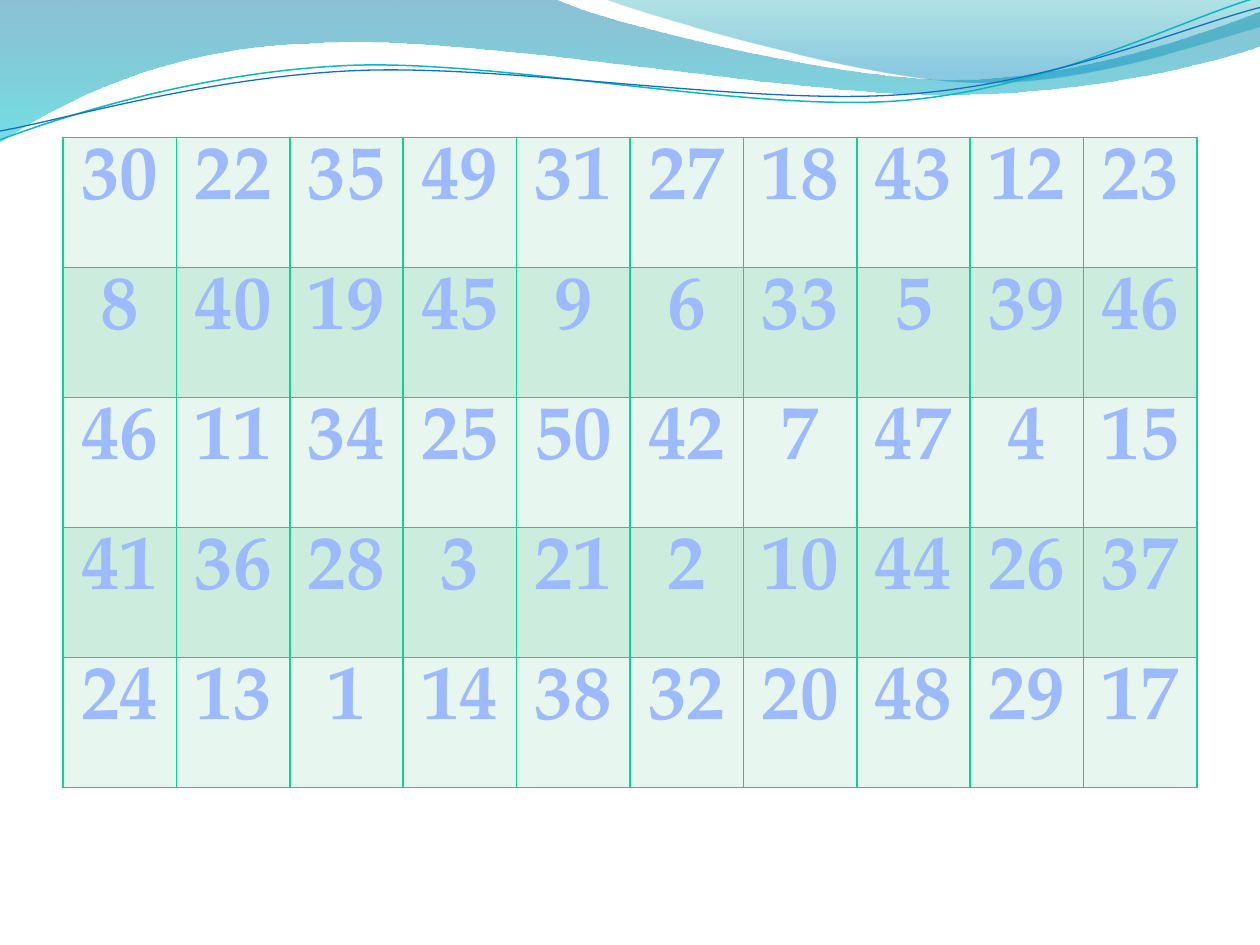
import math

import pptx
import pptx.dml.color
import pptx.enum.text
import pptx.oxml
import pptx.oxml.ns
import pptx.util

THEME = {
    "font": "TeX Gyre Pagella",
    "number_size": 44,
    "number_gradient": [(0, "B8CCFF", 100), (9, "9EBAFF", 100), (50, "00386A", 100),
                        (79, "9EBAFF", 100), (100, "B8CCFF", 100)],
    "number_outline": ("0669C4", 0.83),
    "border": ("10CF9B", 1),
    "row_fills": ["E7F6EF", "CCEDDE"],
    "wide_wave": [(0, "0074A1", 45), (100, "00C6CF", 55)],
    "right_wave": [(0, "00A1A9", 30), (80, "008BBF", 45)],
    "teal_line": ("0AB8BF", 0.85),
    "blue_line": ("0F6FC6", 0.75),
}
NS = pptx.oxml.ns.nsdecls("a")
qn = pptx.oxml.ns.qn


def gradient_xml(stops):
    """Gradient running from top to bottom; stops are (position, colour, opacity)."""
    marks = "".join(
        f'<a:gs pos="{position * 1000}"><a:srgbClr val="{colour}">'
        f'<a:alpha val="{opacity * 1000}"/></a:srgbClr></a:gs>'
        for position, colour, opacity in stops)
    return pptx.oxml.parse_xml(
        f'<a:gradFill {NS} rotWithShape="1"><a:gsLst>{marks}</a:gsLst>'
        '<a:lin ang="5400000" scaled="0"/></a:gradFill>')


def line_xml(tag, colour, points):
    return pptx.oxml.parse_xml(
        f'<a:{tag} {NS} w="{pptx.util.Pt(points)}"><a:solidFill>'
        f'<a:srgbClr val="{colour}"/></a:solidFill></a:{tag}>')


deck = pptx.Presentation()
deck.slide_width = pptx.util.Inches(10)
deck.slide_height = pptx.util.Inches(7.5)
slide = deck.slides.add_slide(deck.slide_layouts[6])
UNIT = deck.slide_width / 10  # grid step: a tenth of the slide's width

# Waves: turning centre (None if level), start, then steps of one point
# (straight) or three points (Bezier)
waves = [
    ("wide_wave", None, (0, 0), [
        [(4.4, -0.01)],
        [(4.76, 0.17), (6.64, 0.63), (7.58, 0.63)],
        [(8.53, 0.63), (9.58, 0.26), (10, 0.09)],
        [(10.01, 0.36)],
        [(9.83, 0.44), (8.7, 0.76), (7.46, 0.75)],
        [(6.22, 0.75), (3.82, 0.28), (2.57, 0.34)],
        [(1.29, 0.36), (0.46, 0.83), (-0.01, 1.13)]]),
    ("right_wave", None, (4.79, -0.01), [
        [(5.09, 0.11), (6.82, 0.62), (7.69, 0.65)],
        [(8.56, 0.69), (9.61, 0.32), (10, 0.21)],
        [(10, 0)]]),
    ("teal_line", (4.99, 0.58), (0, 1.11), [
        [(0.48, 0.93), (1.58, 0.57), (2.77, 0.52)],
        [(3.95, 0.47), (5.93, 0.89), (7.13, 0.8)],
        [(8.33, 0.71), (9.38, 0.15), (9.98, -0.02)]]),
    ("blue_line", (5, 0.59), (0, 1.04), [
        [(0.47, 0.96), (1.64, 0.61), (2.83, 0.56)],
        [(4.03, 0.51), (5.97, 0.84), (7.17, 0.75)],
        [(8.36, 0.67), (9.41, 0.21), (10, 0.06)]]),
]
FINE = 1000  # drawing units per grid step
TILT = 2.7  # degrees by which the thin lines turn to the left
cos, sin = math.cos(math.radians(TILT)), math.sin(math.radians(TILT))
for style, centre, start, steps in waves:
    points = [start] + [point for step in steps for point in step]
    if centre:  # level the points; the shape's own rotation tilts them again
        cx, cy = centre
        points = [(cx + (x - cx) * cos - (y - cy) * sin,
                   cy + (x - cx) * sin + (y - cy) * cos) for x, y in points]
    points = [(round(x * FINE), round(y * FINE)) for x, y in points]
    pen = slide.shapes.build_freeform(*points[0], scale=UNIT / FINE)
    pen.add_line_segments(points[1:], close=centre is None)
    wave = pen.convert_to_shape()
    wave.shadow.inherit = False

    # Turn each three-point step into one Bezier segment
    geometry = wave._element.spPr.find(qn("a:custGeom"))
    segments = iter(list(geometry.iter(qn("a:lnTo"))))
    for step in steps:
        parts = [next(segments) for _ in step]
        if len(parts) == 3:
            curve = pptx.oxml.parse_xml(f"<a:cubicBezTo {NS}/>")
            parts[0].addprevious(curve)
            for part in parts:
                curve.append(part[0])
                part.getparent().remove(part)

    if centre is None:
        wave.line.fill.background()
        geometry.addnext(gradient_xml(THEME[style]))
    else:
        colour, width = THEME[style]
        wave.rotation = 360 - TILT
        wave.fill.background()
        wave.line.color.rgb = pptx.dml.color.RGBColor.from_string(colour)
        wave.line.width = pptx.util.Pt(width)

# Number grid
numbers = [
    [30, 22, 35, 49, 31, 27, 18, 43, 12, 23],
    [8, 40, 19, 45, 9, 6, 33, 5, 39, 46],
    [46, 11, 34, 25, 50, 42, 7, 47, 4, 15],
    [41, 36, 28, 3, 21, 2, 10, 44, 26, 37],
    [24, 13, 1, 14, 38, 32, 20, 48, 29, 17],
]
number_grid = slide.shapes.add_table(
    len(numbers), len(numbers[0]), int(0.5 * UNIT), int(1.09 * UNIT),
    int(9 * UNIT), int(5.16 * UNIT)).table
number_grid.first_row = False
number_grid.horz_banding = False
for row_index, row in enumerate(numbers):
    for column_index, number in enumerate(row):
        cell = number_grid.cell(row_index, column_index)
        cell.fill.solid()
        cell.fill.fore_color.rgb = pptx.dml.color.RGBColor.from_string(
            THEME["row_fills"][row_index % 2])
        for place, side in enumerate(("lnL", "lnR", "lnT", "lnB")):
            cell._tc.tcPr.insert(place, line_xml(side, *THEME["border"]))

        paragraph = cell.text_frame.paragraphs[0]
        paragraph.alignment = pptx.enum.text.PP_ALIGN.CENTER
        run = paragraph.add_run()
        run.text = str(number)
        run.font.name = THEME["font"]
        run.font.size = pptx.util.Pt(THEME["number_size"])
        run.font.bold = True
        run_style = run.font._element
        run_style.insert(0, line_xml("ln", *THEME["number_outline"]))
        run_style.insert(1, gradient_xml(THEME["number_gradient"]))

deck.save("out.pptx")
